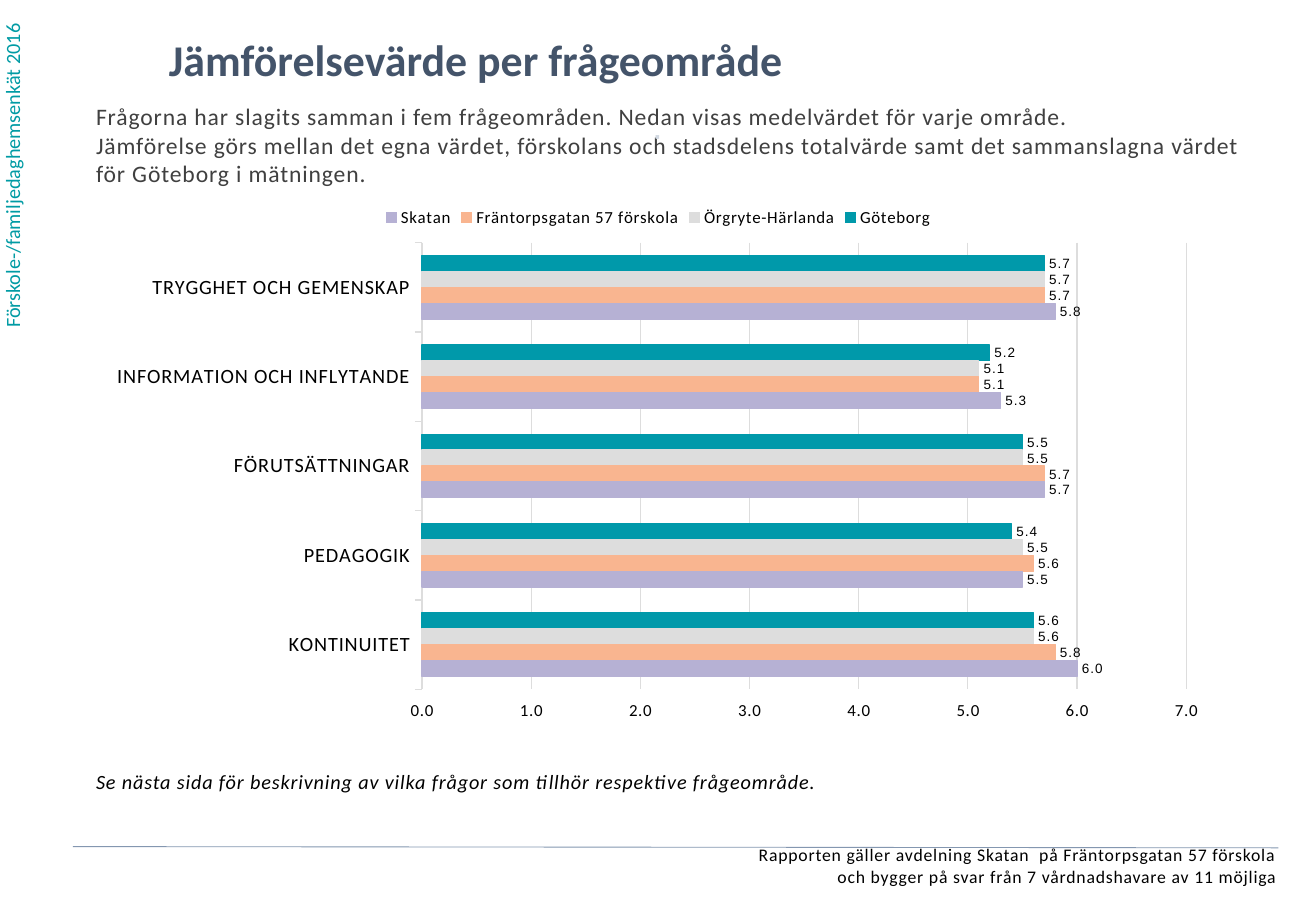
from lxml import etree
from pptx import Presentation
from pptx.chart.data import CategoryChartData
from pptx.dml.color import RGBColor
from pptx.enum.chart import XL_CHART_TYPE, XL_LABEL_POSITION, XL_LEGEND_POSITION, XL_TICK_LABEL_POSITION, XL_TICK_MARK
from pptx.enum.shapes import MSO_CONNECTOR
from pptx.enum.text import MSO_ANCHOR, MSO_AUTO_SIZE, PP_ALIGN
from pptx.oxml import parse_xml
from pptx.oxml.ns import nsdecls, qn
from pptx.util import Inches, Pt

LEFT, MID, RIGHT = PP_ALIGN.LEFT, PP_ALIGN.CENTER, PP_ALIGN.RIGHT
TOP, NO_FIT = MSO_ANCHOR.TOP, MSO_AUTO_SIZE.NONE
BARS = XL_CHART_TYPE.BAR_CLUSTERED
OUT_END = XL_LABEL_POSITION.OUTSIDE_END
TICK_OUT = XL_TICK_MARK.OUTSIDE
HIGH = XL_TICK_LABEL_POSITION.HIGH
LEGEND_TOP = XL_LEGEND_POSITION.TOP
STRAIGHT = MSO_CONNECTOR.STRAIGHT

FONT = "Calibri"
FORMAT = "0.0;0.0"
BLACK = RGBColor(0, 0, 0)
NAVY = RGBColor(0x44, 0x54, 0x6A)
DARK = RGBColor(0x40, 0x40, 0x40)
GREEN = RGBColor(0x00, 0x9B, 0xA4)
TEAL = RGBColor(0x00, 0x99, 0xAA)
GREY = RGBColor(0xDD, 0xDD, 0xDD)
PEACH = RGBColor(0xF9, 0xB5, 0x90)
LILAC = RGBColor(0xB6, 0xB1, 0xD4)
BLUE = RGBColor(0x84, 0x97, 0xB0)
PALE = RGBColor(0xD2, 0xD9, 0xE2)

AREAS = ["TRYGGHET OCH GEMENSKAP", "INFORMATION OCH INFLYTANDE",
         "FÖRUTSÄTTNINGAR", "PEDAGOGIK", "KONTINUITET"]
SERIES = [
    ("Göteborg", TEAL, (5.7, 5.2, 5.5, 5.4, 5.6)),
    ("Örgryte-Härlanda", GREY, (5.7, 5.1, 5.5, 5.5, 5.6)),
    ("Fräntorpsgatan 57 förskola", PEACH, (5.7, 5.1, 5.7, 5.6, 5.8)),
    ("Skatan", LILAC, (5.8, 5.3, 5.7, 5.5, 6.0)),
]


def place(shape, box):
    shape.left, shape.top, shape.width, shape.height = map(Inches, box)


def write(shape, lines, size, color, align=LEFT, bold=None, italic=None, gap=50):
    frame = shape.text_frame
    frame.word_wrap = True
    frame.auto_size = NO_FIT
    frame.vertical_anchor = TOP
    frame.margin_left = frame.margin_right = 0
    frame.margin_top = frame.margin_bottom = 0
    para = frame.paragraphs[0]
    para.alignment = align
    para.space_before = Pt(0)
    for index, line in enumerate(lines):
        if index:
            para.add_line_break()
        run = para.add_run()
        run.text = line
        font = run.font
        font.name, font.size, font.bold, font.italic = FONT, Pt(size), bold, italic
        font.color.rgb = color
        run._r.get_or_add_rPr().set("spc", str(gap))
    return para


def add_text(slide, box, lines, size, color, **style):
    shape = slide.shapes.add_textbox(*map(Inches, box))
    write(shape, lines, size, color, **style)
    return shape


def add_side(slide, box):
    shape = add_text(slide, box, ["Förskole-/familjedaghemsenkät 2016"], 12, GREEN, gap=0)
    shape.text_frame._txBody.bodyPr.set("vert", "vert270")


def add_head(slide, box):
    left, top, width, height = box
    title, body = slide.shapes.title, slide.placeholders[1]
    place(title, (left + 0.6, top, width - 1.12, 0.57))
    write(title, ["Jämförelsevärde per frågeområde"], 26, NAVY, bold=True, gap=0)
    place(body, (left, top + 0.57, width, height - 0.57))
    para = write(body, [
        "Frågorna har slagits samman i fem frågeområden. Nedan visas medelvärdet för varje område.",
        "Jämförelse görs mellan det egna värdet, förskolans och stadsdelens totalvärde "
        "samt det sammanslagna värdet för Göteborg i mätningen.",
    ], 14, DARK)
    props = para._p.get_or_add_pPr()
    props.set("marL", "0")
    props.set("indent", "0")
    etree.SubElement(props, qn("a:buNone"))
    add_text(slide, (left + 3.08, top + 0.75, 3.08, 0.39), ["⋅"], 12, PALE, align=MID, bold=True)


def set_plot(chart, box):
    area = chart._chartSpace.chart.plotArea
    for old in area.findall(qn("c:layout")):
        area.remove(old)
    parts = "".join(f'<c:{key} val="{val}"/>' for key, val in zip("xywh", box))
    area.insert(0, parse_xml(
        f'<c:layout {nsdecls("c")}><c:manualLayout><c:layoutTarget val="inner"/>'
        f'<c:xMode val="edge"/><c:yMode val="edge"/>{parts}</c:manualLayout></c:layout>'))


def set_font(font, size, name=FONT):
    font.name, font.size = name, Pt(size)
    font.color.rgb = BLACK


def set_line(line, color):
    line.color.rgb = color
    line.width = Pt(0.75)


def add_bars(slide, box):
    data = CategoryChartData(number_format="0.0")
    data.categories = AREAS
    for name, _, values in SERIES:
        data.add_series(name, values)
    chart = slide.shapes.add_chart(BARS, *map(Inches, box), data).chart
    chart.has_title = False
    set_font(chart.font, 10)
    chart.has_legend = True
    chart.legend.position = LEGEND_TOP
    chart.legend.include_in_layout = False
    set_font(chart.legend.font, 10)
    plot = chart.plots[0]
    plot.gap_width, plot.overlap, plot.vary_by_categories = 162, 0, False
    for series, (_, color, _) in zip(plot.series, SERIES):
        series.format.fill.solid()
        series.format.fill.fore_color.rgb = color
        set_line(series.format.line, color)
        labels = series.data_labels
        labels.show_value = True
        labels.number_format, labels.number_format_is_linked = FORMAT, False
        labels.position = OUT_END
        set_font(labels.font, 8, "Arial")
    cats, vals = chart.category_axis, chart.value_axis
    cats.reverse_order = True
    cats.major_tick_mark = vals.major_tick_mark = TICK_OUT
    set_line(cats.format.line, GREY)
    set_font(cats.tick_labels.font, 12)
    vals.minimum_scale, vals.maximum_scale, vals.major_unit = 0, 7, 1
    vals.format.line.fill.background()
    vals.has_major_gridlines = True
    set_line(vals.major_gridlines.format.line, GREY)
    vals.tick_label_position = HIGH
    set_font(vals.tick_labels.font, 10)
    vals.tick_labels.number_format = FORMAT
    vals.tick_labels.number_format_is_linked = False
    set_plot(chart, (0.29, 0.09, 0.68, 0.83))
    for props in chart._chartSpace.iter(qn("a:defRPr")):
        props.set("spc", "50")


def add_foot(slide, box):
    left, top, width, height = box
    right = left + width
    add_text(slide, (left + 0.19, top, 9.25, 0.3),
             ["Se nästa sida för beskrivning av vilka frågor som tillhör respektive frågeområde."],
             12, BLACK, italic=True)
    rule = slide.shapes.add_connector(
        STRAIGHT, *map(Inches, (left, top + 0.64, right, top + 0.65)))
    rule.line.color.rgb = BLUE
    rule.line.width = Pt(0.5)
    etree.SubElement(rule._element.spPr, qn("a:effectLst"))
    add_text(slide, (left, top + 0.62, width - 0.01, height - 0.62), [
        "Rapporten gäller avdelning Skatan  på Fräntorpsgatan 57 förskola",
        "och bygger på svar från 7 vårdnadshavare av 11 möjliga",
    ], 10.5, BLACK, align=RIGHT)


def main():
    deck = Presentation()
    deck.slide_width, deck.slide_height = Inches(10.83), Inches(7.5)
    slide = deck.slides.add_slide(deck.slide_layouts[1])
    add_side(slide, (0, 0, 0.38, 2.7))
    add_head(slide, (0.79, 0.27, 9.46, 1.58))
    add_bars(slide, (0.79, 1.6, 9.25, 4.43))
    add_foot(slide, (0.6, 6.33, 9.92, 1.05))
    deck.save("out.pptx")


if __name__ == "__main__":
    main()
